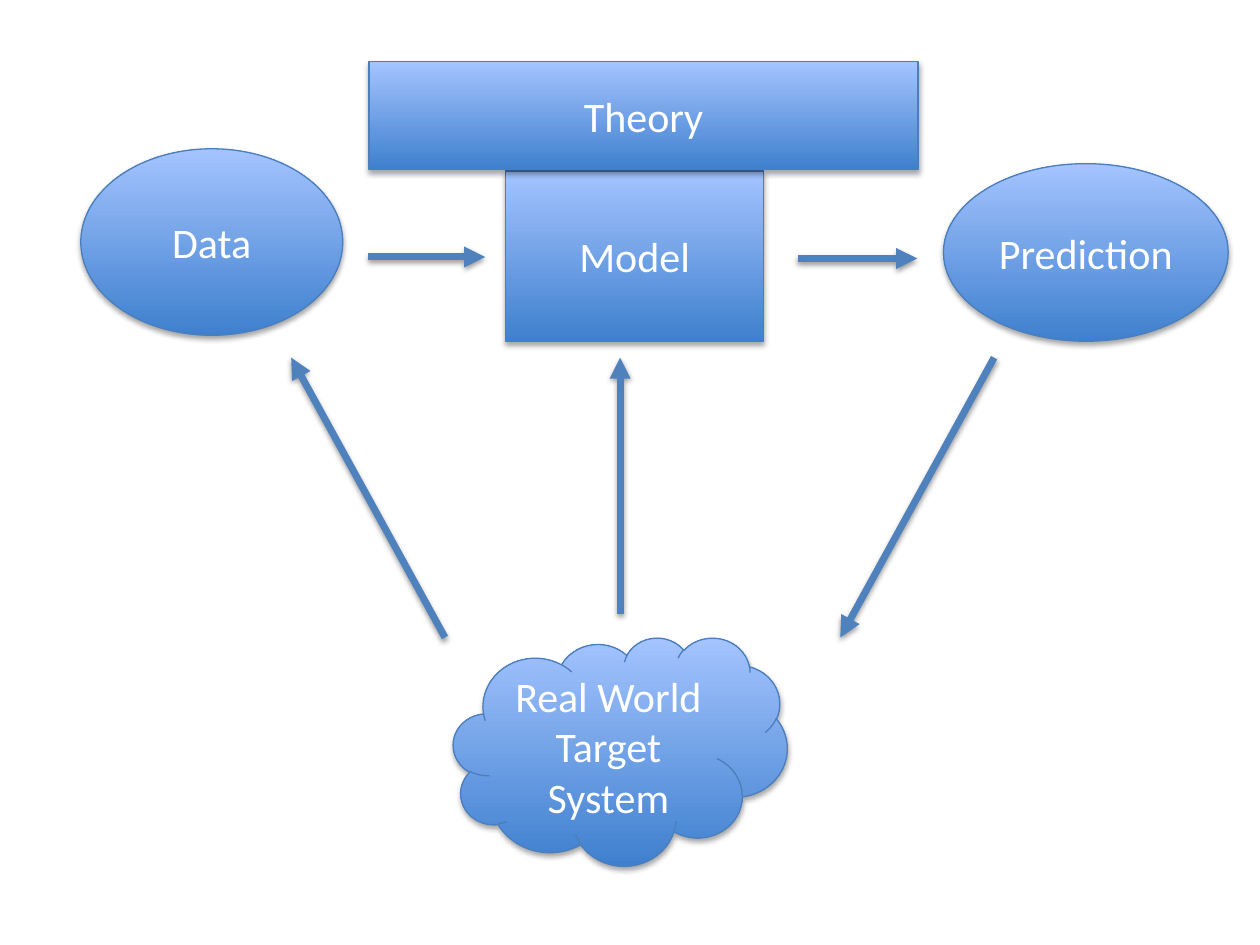
import dataclasses
import typing

import pptx
import pptx.dml.color
import pptx.enum.shapes
import pptx.enum.text
import pptx.oxml
import pptx.oxml.ns
import pptx.util

Cm = pptx.util.Cm
Pt = pptx.util.Pt
SHAPE = pptx.enum.shapes.MSO_SHAPE


@dataclasses.dataclass(frozen=True)
class Theme:
    font: str = "Calibri"
    text_size: float = 24
    text: str = "FFFFFF"
    fill_bottom: str = "3F80CE"
    fill_top: str = "A4C4FF"
    outline: str = "4B7EBC"
    outline_width: float = 0.75
    arrow: str = "4F81BD"
    arrow_width: float = 4
    shadow: str = "000000"


@dataclasses.dataclass(frozen=True)
class Node:
    text: str
    kind: typing.Any
    left: float
    top: float
    width: float
    height: float


@dataclasses.dataclass(frozen=True)
class Arrow:
    x1: float
    y1: float
    x2: float
    y2: float


THEME = Theme()

WORLD = Node("Real World Target System", SHAPE.CLOUD, 9.14, 12.85, 6.73, 4.6)
PREDICTION = Node("Prediction", SHAPE.OVAL, 19.02, 3.3, 5.74, 3.58)
MODEL = Node("Model", SHAPE.RECTANGLE, 10.19, 3.45, 5.21, 3.43)
DATA = Node("Data", SHAPE.OVAL, 1.63, 3, 5.28, 3.76)
THEORY = Node("Theory", SHAPE.RECTANGLE, 7.44, 1.24, 11.07, 2.18)

UPPER_Y = 7.21
WORLD_TO_DATA = Arrow(8.97, WORLD.top, 5.87, UPPER_Y)
PREDICTION_TO_WORLD = Arrow(20.04, UPPER_Y, 16.94, WORLD.top)
DATA_TO_MODEL = Arrow(7.42, 5.18, 9.78, 5.18)
MODEL_TO_PREDICTION = Arrow(16.08, 5.21, 18.49, 5.21)
WORLD_TO_MODEL = Arrow(12.5, 12.37, 12.5, UPPER_Y)

DIAGRAM = [
    WORLD, PREDICTION, MODEL,
    WORLD_TO_DATA, PREDICTION_TO_WORLD, DATA_TO_MODEL, MODEL_TO_PREDICTION,
    DATA, WORLD_TO_MODEL, THEORY,
]


def rgb(value: str) -> pptx.dml.color.RGBColor:
    return pptx.dml.color.RGBColor.from_string(value)


def xml(body: str) -> typing.Any:
    tag, rest = body.split(" ", 1)
    return pptx.oxml.parse_xml(f"{tag} {pptx.oxml.ns.nsdecls('a')} {rest}")


def add_shadow(sp: typing.Any, *, distance: float, opacity: int) -> None:
    sp._element.spPr.append(xml(
        f'<a:effectLst ><a:outerShdw blurRad="{Pt(3.1)}" dist="{Pt(distance)}" '
        f'dir="5400000" rotWithShape="0"><a:srgbClr val="{THEME.shadow}">'
        f'<a:alpha val="{opacity * 1000}"/></a:srgbClr></a:outerShdw></a:effectLst>'
    ))


def write(tf: typing.Any, text: str, *, size: float = THEME.text_size,
          color: str = THEME.text, font: str = THEME.font,
          align: typing.Any = pptx.enum.text.PP_ALIGN.CENTER,
          anchor: typing.Any = pptx.enum.text.MSO_ANCHOR.MIDDLE) -> None:
    tf.word_wrap = True
    tf.vertical_anchor = anchor
    p = tf.paragraphs[0]
    p.alignment = align
    r = p.add_run()
    r.text = text
    r.font.size = Pt(size)
    r.font.name = font
    r.font.color.rgb = rgb(color)


def draw_node(s: typing.Any, node: Node) -> None:
    sp = s.shapes.add_shape(node.kind, Cm(node.left), Cm(node.top),
                            Cm(node.width), Cm(node.height))
    sp.fill.gradient()
    sp.fill.gradient_angle = 90
    for stop, color in zip(sp.fill.gradient_stops, (THEME.fill_bottom, THEME.fill_top)):
        stop.color.rgb = rgb(color)
    sp.line.color.rgb = rgb(THEME.outline)
    sp.line.width = Pt(THEME.outline_width)
    add_shadow(sp, distance=1.8, opacity=35)
    write(sp.text_frame, node.text)


def draw_arrow(s: typing.Any, arrow: Arrow) -> None:
    sp = s.shapes.add_connector(pptx.enum.shapes.MSO_CONNECTOR.STRAIGHT,
                                Cm(arrow.x1), Cm(arrow.y1), Cm(arrow.x2), Cm(arrow.y2))
    sp.line.color.rgb = rgb(THEME.arrow)
    sp.line.width = Pt(THEME.arrow_width)
    sp.line._get_or_add_ln().append(xml('<a:tailEnd type="triangle"/>'))
    add_shadow(sp, distance=1.6, opacity=38)


def main() -> None:
    prs = pptx.Presentation()
    prs.slide_width, prs.slide_height = Cm(25.4), Cm(19.05)
    s = prs.slides.add_slide(prs.slide_layouts[6])
    for item in DIAGRAM:
        if isinstance(item, Node):
            draw_node(s, item)
        else:
            draw_arrow(s, item)
    prs.save("out.pptx")


if __name__ == "__main__":
    main()
